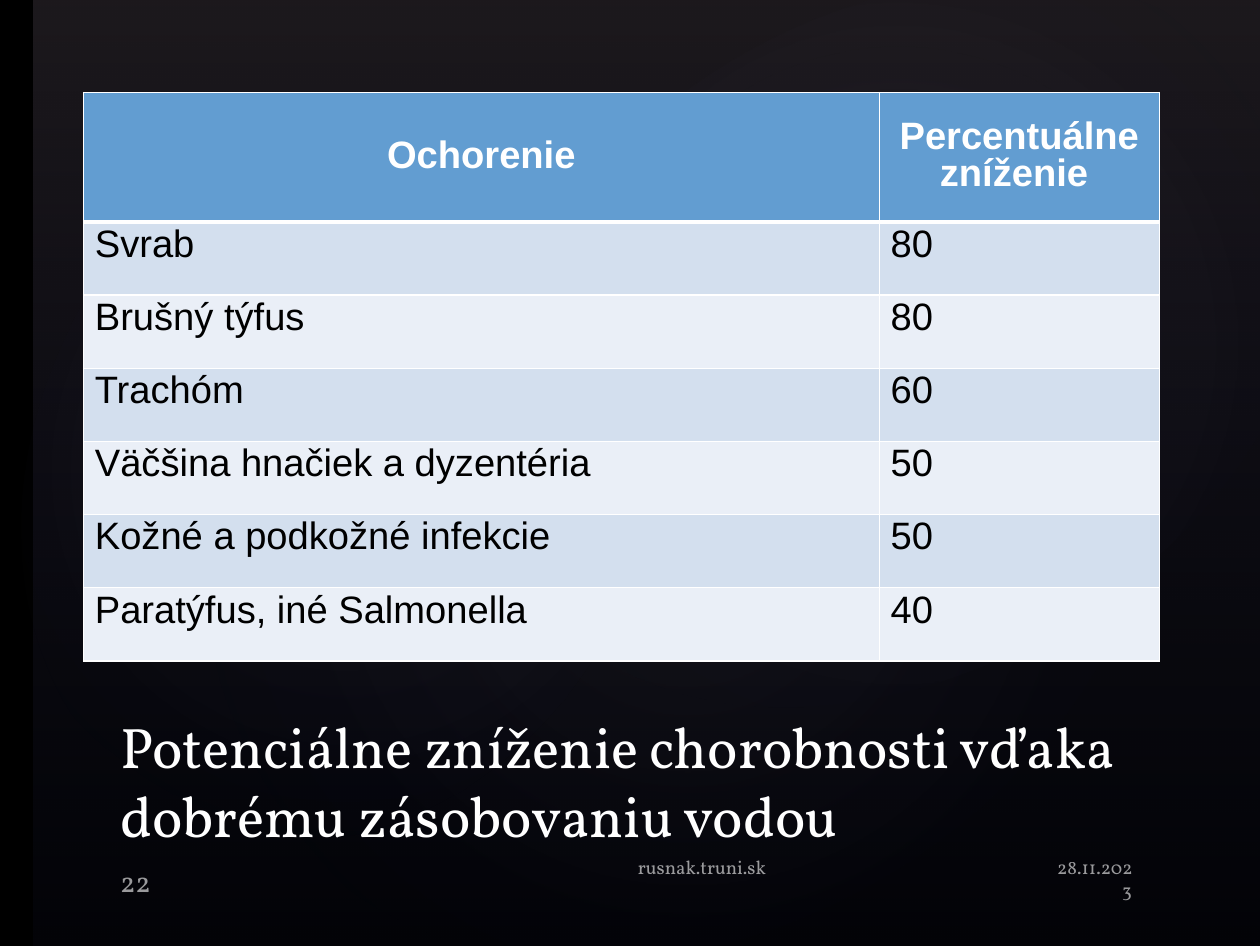
from lxml import etree
from pptx import Presentation
from pptx.dml.color import RGBColor
from pptx.enum.shapes import MSO_SHAPE
from pptx.enum.text import MSO_ANCHOR, MSO_AUTO_SIZE, PP_ALIGN
from pptx.oxml.ns import qn
from pptx.util import Inches, Pt

RECT, OVAL = MSO_SHAPE.RECTANGLE, MSO_SHAPE.OVAL
TOP, MID, LOW = MSO_ANCHOR.TOP, MSO_ANCHOR.MIDDLE, MSO_ANCHOR.BOTTOM
LEFT, MID_X, RIGHT = PP_ALIGN.LEFT, PP_ALIGN.CENTER, PP_ALIGN.RIGHT
FIXED = MSO_AUTO_SIZE.NONE

COLORS = {"back": "000000", "white": "FFFFFF", "black": "000000",
          "head": "629DD1", "odd": "D3DFEE", "even": "EAEFF7",
          "haze": "504652", "navy": "242852", "glow": "C4BCC6"}
SERIF, SANS = "Vollkorn", "Arial"

TITLE = "Potenciálne zníženie chorobnosti vďaka dobrému zásobovaniu vodou"
TITLE_BOX = (0.94, 6.38, 9.09, 1.1)
ROWS = [
    ("Ochorenie", "Percentuálne zníženie "),
    ("Svrab", "80"),
    ("Brušný týfus", "80"),
    ("Trachóm", "60"),
    ("Väčšina hnačiek a dyzentéria", "50"),
    ("Kožné a podkožné infekcie", "50"),
    ("Paratýfus, iné Salmonella", "40"),
]
TABLE_AT = (0.73, 0.81)
WIDTHS = (6.96, 2.45)
HEAD_H, ROW_H = 1.13, 0.64

# text, box, size, align, anchor, bottom inset
NOTES = [
    ("28.11.2023", (9.12, 7.42, 0.89, 0.44), 12, RIGHT, TOP, 0.06),
    ("22", (0.94, 7.48, 0.9, 0.38), 18, LEFT, LOW, 0.01),
    ("rusnak.truni.sk", (5.47, 7.42, 1.37, 0.44), 12, LEFT, TOP, 0.06),
]
# box, rotation, opacity of the centre in percent
GLOWS = [
    ((1.65, 1.25, 8.73, 6.88), 328.7, 7),
    ((-0.33, 1.41, 6.68, 5.4), 294.3, 8),
    ((3.95, 0.14, 7.81, 5.73), 328.7, 8),
]


def rgb(name):
    return RGBColor.from_string(COLORS[name])


def inches(box):
    return [Inches(v) for v in box]


def node(parent, tag, **attrs):
    item = etree.SubElement(parent, qn(tag))
    for key, value in attrs.items():
        item.set(key, str(value))
    return item


def tint(parent, name, alpha):
    color = node(parent, "a:srgbClr", val=COLORS[name])
    node(color, "a:alpha", val=alpha * 1000)


def blend(slide, kind, box, stops, turn=0):
    """Add a shape with a see-through gradient: linear or, in an oval, radial."""
    shape = slide.shapes.add_shape(kind, *inches(box))
    shape.rotation = turn
    shape.shadow.inherit = False
    shape.line.fill.background()
    fill = etree.Element(qn("a:gradFill"), rotWithShape="1")
    group = node(fill, "a:gsLst")
    for pos, name, alpha in stops:
        tint(node(group, "a:gs", pos=pos * 1000), name, alpha)
    if kind == OVAL:
        ring = node(fill, "a:path", path="circle")
        node(ring, "a:fillToRect", l=50000, t=50000, r=50000, b=50000)
    else:
        node(fill, "a:lin", ang=5400000, scaled=0)
    shape._element.spPr.find(qn("a:prstGeom")).addnext(fill)


def write(shape, text, size, align, anchor, low=0.06):
    frame = shape.text_frame
    frame.text = text
    frame.word_wrap = True
    frame.auto_size = FIXED
    frame.vertical_anchor = anchor
    frame.margin_left = frame.margin_right = Inches(0.11)
    frame.margin_top, frame.margin_bottom = Inches(0.06), Inches(low)
    line = frame.paragraphs[0]
    line.alignment = align
    style(line.font, SERIF, size, "white")
    return line


def style(font, face, size, color, bold=False):
    font.name, font.size, font.bold = face, Pt(size), bold
    font.color.rgb = rgb(color)


def frame_cell(cell, head, below):
    """Draw white borders, thick under the head row."""
    props = cell._tc.get_or_add_tcPr()
    sides = [("a:lnL", 1), ("a:lnR", 1), ("a:lnT", 3 if below else 1),
             ("a:lnB", 3 if head else 1)]
    for i, (tag, width) in enumerate(sides):
        line = etree.Element(qn(tag), w=str(Pt(width)))
        node(node(line, "a:solidFill"), "a:srgbClr", val=COLORS["white"])
        props.insert(i, line)


def add_grid(slide):
    size = (sum(WIDTHS), HEAD_H + ROW_H * (len(ROWS) - 1))
    table = slide.shapes.add_table(len(ROWS), len(WIDTHS),
                                   *inches(TABLE_AT + size)).table
    for col, width in zip(table.columns, WIDTHS):
        col.width = Inches(width)
    for r, row in enumerate(ROWS):
        head = r == 0
        table.rows[r].height = Inches(HEAD_H if head else ROW_H)
        for c, text in enumerate(row):
            cell = table.cell(r, c)
            cell.text = text
            cell.vertical_anchor = MID if head else TOP
            cell.fill.solid()
            cell.fill.fore_color.rgb = rgb(
                "head" if head else "odd" if r % 2 else "even")
            line = cell.text_frame.paragraphs[0]
            line.alignment = MID_X if head else LEFT
            line.line_spacing = 0.87
            style(line.font, SANS, 24, "white" if head else "black", head)
            frame_cell(cell, head, r == 1)


def main():
    deck = Presentation()
    deck.slide_width, deck.slide_height = Inches(11.02), Inches(8.27)
    slide = deck.slides.add_slide(deck.slide_layouts[5])
    slide.background.fill.solid()
    slide.background.fill.fore_color.rgb = rgb("back")

    blend(slide, RECT, (0.29, 0, 10.73, 8.27),
          [(0, "haze", 36), (100, "navy", 10)])
    for box, turn, alpha in GLOWS:
        blend(slide, OVAL, box, [(0, "glow", alpha), (58, "navy", 0)], turn)

    title = slide.shapes.title
    title.left, title.top, title.width, title.height = inches(TITLE_BOX)
    write(title, TITLE, 36, LEFT, LOW)
    slide.shapes._spTree.append(title._element)  # bring above the backdrop

    for text, box, size, align, anchor, low in NOTES:
        note = slide.shapes.add_textbox(*inches(box))
        line = write(note, text, size, align, anchor, low)
        for color in line._p.iter(qn("a:srgbClr")):
            node(color, "a:alpha", val=60000)
    add_grid(slide)
    deck.save("out.pptx")


if __name__ == "__main__":
    main()
